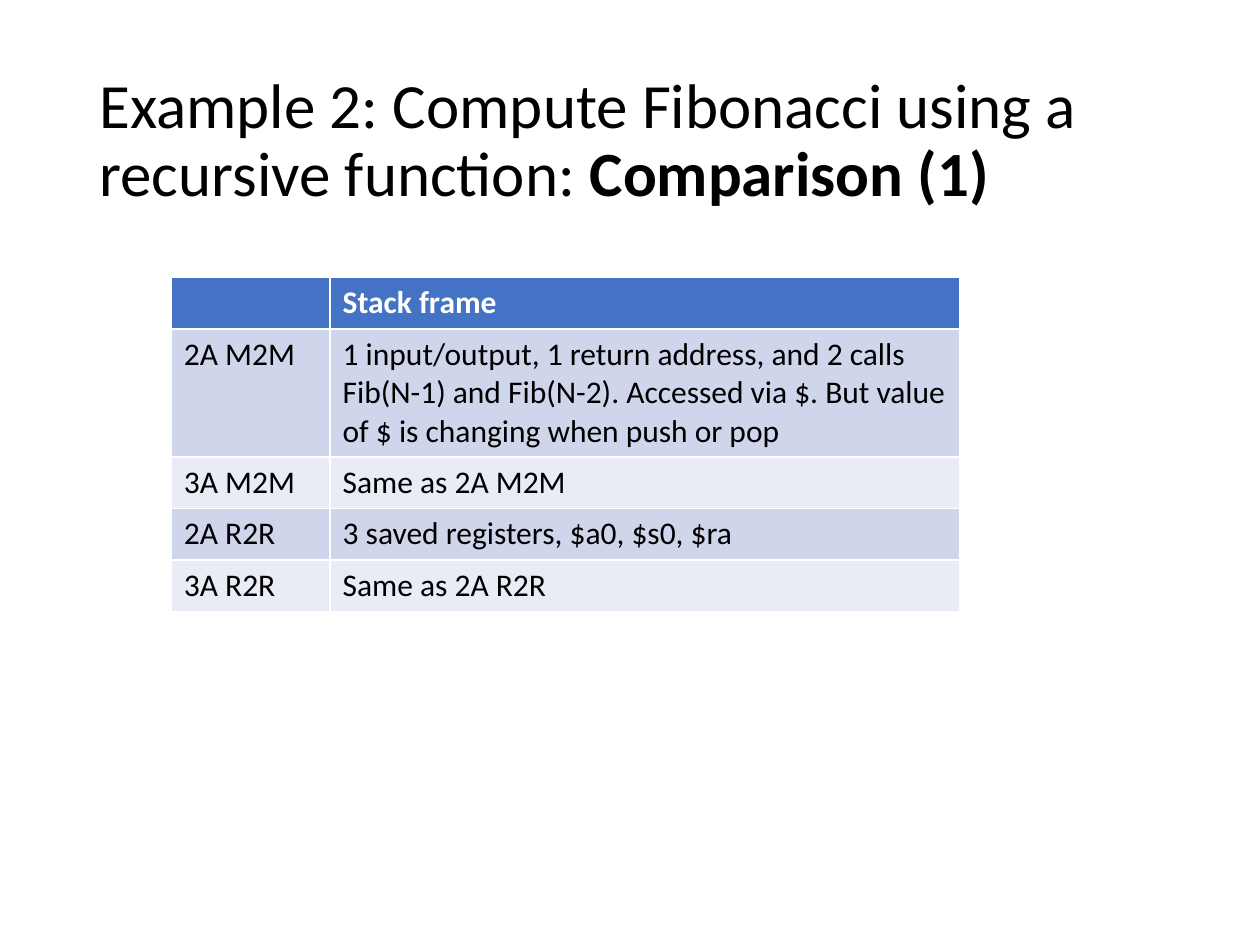
"""Build the slide that compares stack frames for recursive Fibonacci."""
from pptx import Presentation, util as u
from pptx.dml.color import RGBColor
from pptx.enum import text

BLACK = RGBColor(0x00, 0x00, 0x00)
WHITE = RGBColor(0xFF, 0xFF, 0xFF)
BLUE = RGBColor(0x44, 0x72, 0xC4)
BANDS = [RGBColor(0xE9, 0xEB, 0xF5), RGBColor(0xCF, 0xD5, 0xEA)]
FONT = "Calibri"


def add_run(para, words, size, color, bold=False):
    run = para.add_run()
    run.text = words
    font = run.font
    font.name, font.size, font.bold = FONT, u.Pt(size), bold
    font.color.rgb = color


deck = Presentation()
deck.slide_width, deck.slide_height = u.Inches(10), u.Inches(7.5)
slide = deck.slides.add_slide(deck.slide_layouts[5])

title = slide.shapes.title
title.left, title.top = u.Inches(0.69), u.Inches(0.4)
title.width, title.height = u.Inches(8.62), u.Inches(1.45)
frame = title.text_frame
frame.word_wrap = True
frame.auto_size = text.MSO_AUTO_SIZE.NONE
frame.vertical_anchor = text.MSO_ANCHOR.MIDDLE
para = frame.paragraphs[0]
para.alignment = text.PP_ALIGN.LEFT
para.line_spacing = 0.9
add_run(para, "Example 2: Compute Fibonacci using a recursive function: ", 36, BLACK)
add_run(para, "Comparison (1)", 36, BLACK, True)

rows = [
    ("", "Stack frame"),
    ("2A M2M", "1 input/output, 1 return address, and 2 calls Fib(N-1) and Fib(N-2). "
               "Accessed via $. But value of $ is changing when push or pop"),
    ("3A M2M", "Same as 2A M2M"),
    ("2A R2R", "3 saved registers, $a0, $s0, $ra"),
    ("3A R2R", "Same as 2A R2R"),
]
high = u.Inches(0.41)
table = slide.shapes.add_table(
    len(rows), 2, u.Inches(1.36), u.Inches(2.2), u.Inches(6.26), high * len(rows)
).table
table.columns[0].width = u.Inches(1.26)
table.columns[1].width = u.Inches(5)

for r, row in enumerate(rows):
    table.rows[r].height = high
    head = r == 0
    for c, words in enumerate(row):
        cell = table.cell(r, c)
        cell.fill.solid()
        cell.fill.fore_color.rgb = BLUE if head else BANDS[r % 2]
        if words:
            add_run(cell.text_frame.paragraphs[0], words, 18, WHITE if head else BLACK, head)

deck.save("out.pptx")
